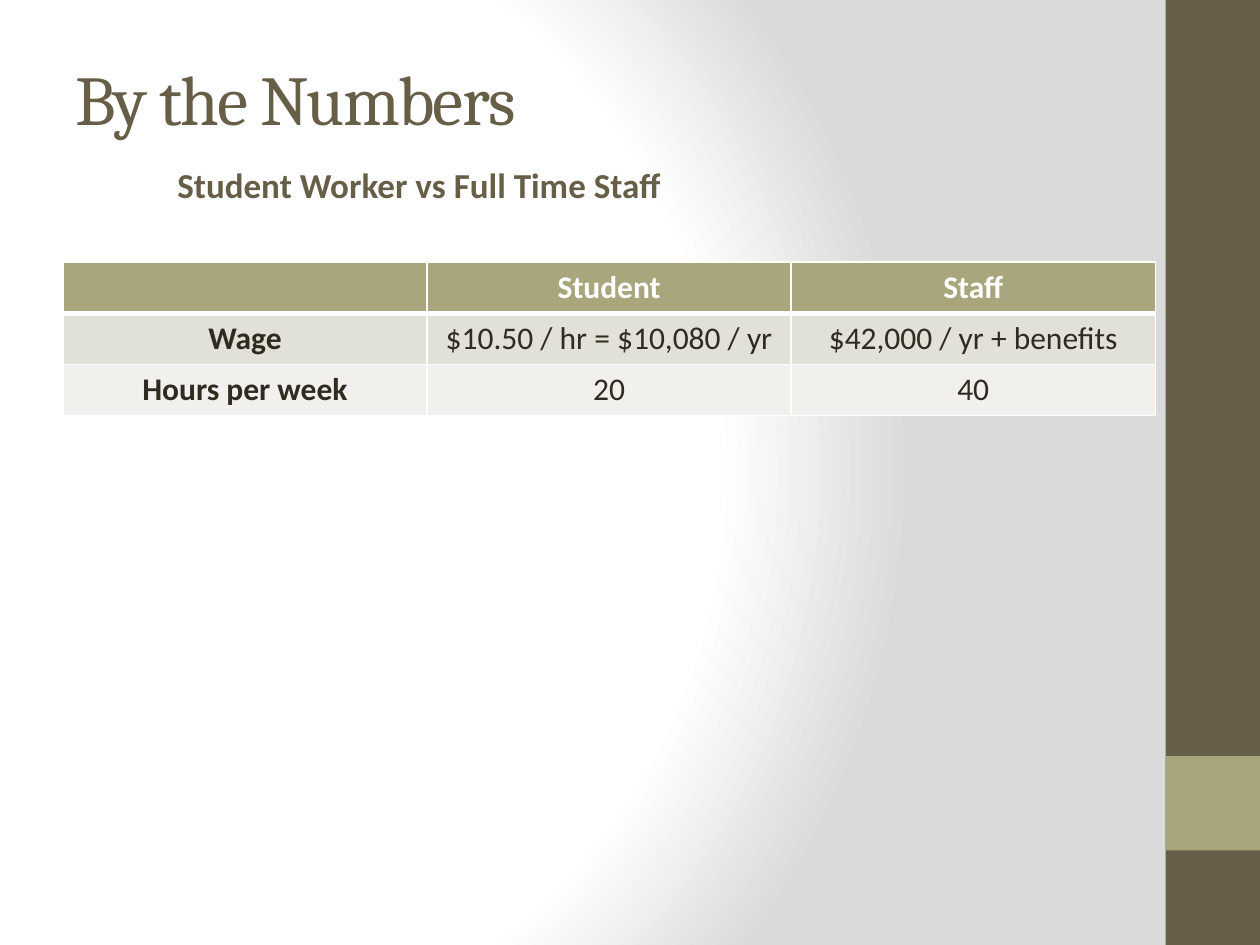
from lxml import etree
from pptx import Presentation
from pptx.dml.color import RGBColor
from pptx.enum import shapes, text
from pptx.oxml import parse_xml
from pptx.oxml.ns import nsdecls, qn
from pptx.util import Inches, Pt

BROWN = RGBColor(0x67, 0x5E, 0x47)
OLIVE = RGBColor(0xA9, 0xA5, 0x7C)
INK = RGBColor(0x2F, 0x2B, 0x20)
WHITE = RGBColor(0xFF, 0xFF, 0xFF)
GREY = RGBColor(0xDA, 0xDA, 0xDA)
BANDS = [RGBColor(0xE2, 0xE1, 0xD7), RGBColor(0xF1, 0xF0, 0xEC)]

COMPARISON = [
    ["", "Student", "Staff"],
    ["Wage", "$10.50 / hr = $10,080 / yr", "$42,000 / yr + benefits"],
    ["Hours per week", "20", "40"],
]


def write(frame, words, size=18, font="Calibri", color=INK, bold=False,
          align=text.PP_ALIGN.LEFT, indent=0, spacing=0):
    """Put one formatted paragraph in a frame; indent in inches, spacing in points."""
    paragraph = frame.paragraphs[0]
    paragraph.alignment = align
    if indent:
        properties = paragraph._p.get_or_add_pPr()
        properties.set("marL", str(Inches(indent)))
        properties.set("indent", "0")
    run = paragraph.add_run()
    run.text = words
    run.font.size, run.font.name = Pt(size), font
    run.font.bold, run.font.color.rgb = bold, color
    if spacing:
        run._r.get_or_add_rPr().set("spc", str(spacing * 100))


class Deck:
    def __init__(self):
        self.presentation = Presentation()
        self.presentation.slide_width = Inches(10)
        self.presentation.slide_height = Inches(7.5)
        self.slide = self.presentation.slides.add_slide(
            self.presentation.slide_layouts[5])

    def background(self, stops):
        """Fill the background with a circular gradient of (percent, colour) stops."""
        marks = "".join(
            f'<a:gs pos="{percent * 1000}"><a:srgbClr val="{color}"/></a:gs>'
            for percent, color in stops)
        self.slide._element.cSld.insert(0, parse_xml(
            f'<p:bg {nsdecls("p", "a")}><p:bgPr><a:gradFill rotWithShape="1">'
            f'<a:gsLst>{marks}</a:gsLst><a:path path="circle">'
            '<a:fillToRect l="20000" t="50000" r="100000" b="50000"/></a:path>'
            '</a:gradFill><a:effectLst/></p:bgPr></p:bg>'))

    def block(self, left, top, width, height, color):
        block = self.slide.shapes.add_shape(
            shapes.MSO_SHAPE.RECTANGLE, Inches(left), Inches(top),
            Inches(width), Inches(height))
        block.shadow.inherit = False
        block.fill.solid()
        block.fill.fore_color.rgb = color
        block.line.fill.background()

    def title(self, words, left, top, width, height):
        title = self.slide.shapes.title
        title.left, title.top = Inches(left), Inches(top)
        title.width, title.height = Inches(width), Inches(height)
        title.text_frame.vertical_anchor = text.MSO_ANCHOR.MIDDLE
        write(title.text_frame, words, size=40, font="Cambria", color=BROWN, spacing=-1)

    def label(self, words, left, top, width, height, **style):
        label = self.slide.shapes.add_textbox(
            Inches(left), Inches(top), Inches(width), Inches(height))
        label.text_frame.word_wrap = True
        write(label.text_frame, words, **style)

    def border(self, cell, **widths):
        """Draw white cell borders; widths in points, keyed L, R, T, B in that order."""
        properties = cell._tc.get_or_add_tcPr()
        for side, width in widths.items():
            line = etree.SubElement(properties, qn(f"a:ln{side}"), w=str(Pt(width)))
            fill = etree.SubElement(line, qn("a:solidFill"))
            etree.SubElement(fill, qn("a:srgbClr"), val=str(WHITE))

    def table(self, rows, left, top, width, height):
        table = self.slide.shapes.add_table(
            len(rows), len(rows[0]), Inches(left), Inches(top),
            Inches(width), Inches(height)).table
        for r, row in enumerate(rows):
            header = r == 0
            for c, words in enumerate(row):
                cell = table.cell(r, c)
                self.border(cell, L=1, R=1, T=3 if r == 1 else 1, B=3 if header else 1)
                cell.fill.solid()
                cell.fill.fore_color.rgb = OLIVE if header else BANDS[(r - 1) % 2]
                if words:
                    write(cell.text_frame, words, color=WHITE if header else INK,
                          bold=header or c == 0, align=text.PP_ALIGN.CENTER)


def main():
    deck = Deck()
    deck.background([(0, WHITE), (75, WHITE), (100, GREY)])
    deck.block(9.25, 0, 0.75, 7.5, BROWN)
    deck.block(9.25, 6, 0.75, 0.75, OLIVE)
    deck.title("By the Numbers", 0.5, 0.3, 8.33, 0.95)
    deck.table(COMPARISON, 0.5, 2.08, 8.67, 1.22)
    deck.label("Student Worker vs Full Time Staff", 0.5, 1.25, 8.33, 0.42,
               size=20, color=BROWN, bold=True, indent=0.81)
    deck.presentation.save("out.pptx")


if __name__ == "__main__":
    main()
